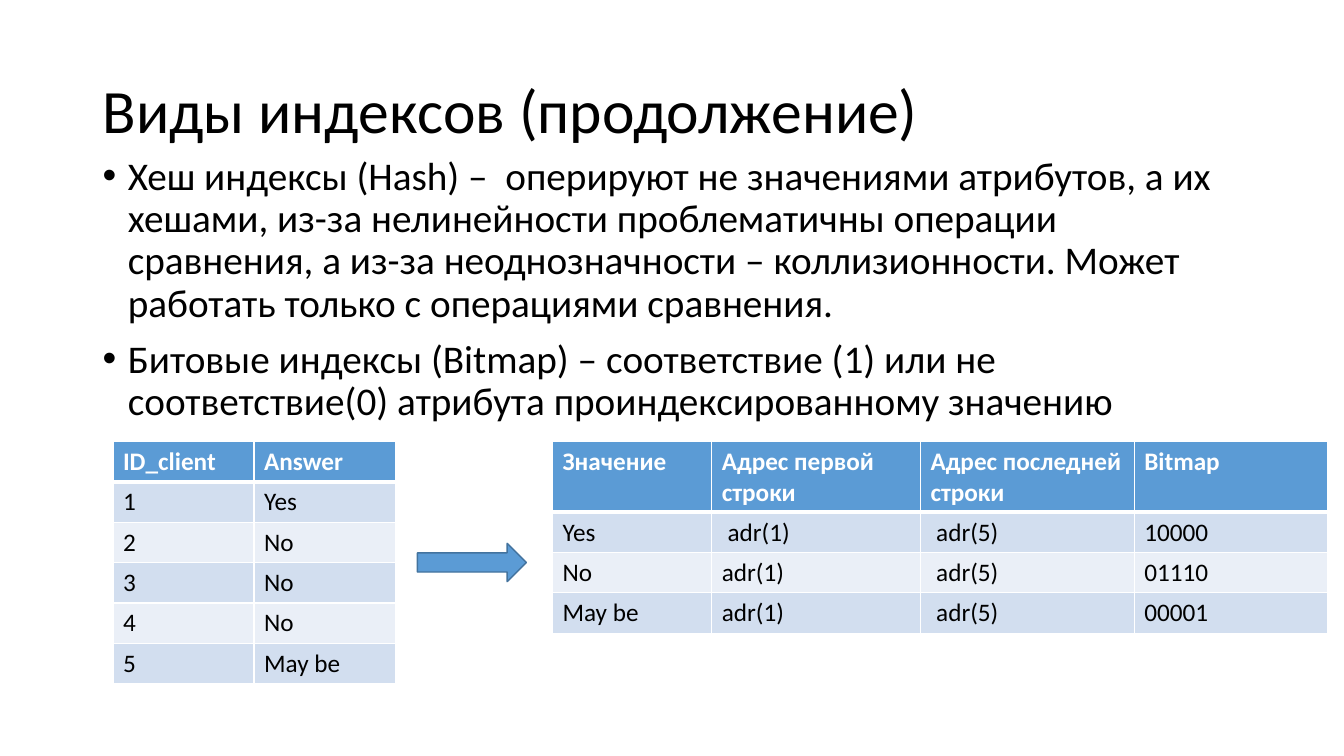
from dataclasses import dataclass

from lxml.etree import SubElement
from pptx import Presentation
from pptx.dml.color import RGBColor
from pptx.enum.shapes import MSO_SHAPE
from pptx.enum.text import MSO_ANCHOR
from pptx.oxml import parse_xml
from pptx.oxml.ns import nsdecls, qn
from pptx.util import Inches, Pt

# Content
TITLE = "Виды индексов (продолжение)"
INDEX_KINDS = [
    "Хеш индексы (Hash) –  оперируют не значениями атрибутов, а их хешами, "
    "из-за нелинейности проблематичны операции сравнения, а из-за "
    "неоднозначности – коллизионности. Может работать только с операциями "
    "сравнения.",
    "Битовые индексы (Bitmap) – соответствие (1) или не соответствие(0) "
    "атрибута проиндексированному значению",
]
CLIENT_ANSWERS = [
    ("ID_client", "Answer"),
    ("1", "Yes"),
    ("2", "No"),
    ("3", "No"),
    ("4", "No"),
    ("5", "May be"),
]
BITMAP_INDEX = [
    ("Значение", "Адрес первой строки", "Адрес последней строки", "Bitmap"),
    ("Yes", " adr(1)", " adr(5)", "10000"),
    ("No", "adr(1)", " adr(5)", "01110"),
    ("May be", "adr(1)", " adr(5)", "00001"),
]


@dataclass(frozen=True)
class Theme:
    font: str = "Calibri"
    title_size: int = 44
    body_size: int = 28
    table_size: int = 18
    ink: str = "000000"
    paper: str = "FFFFFF"
    accent: str = "5B9BD5"
    accent_edge: str = "43739E"
    bands: tuple = ("D2DEEF", "EAEFF7")


THEME = Theme()

# Layout, in inches
TEXT_LEFT, TEXT_WIDTH = 0.92, 11.5
TABLE_TOP, ROW_HEIGHT = 4.38, 0.4
BULLET_INDENT = 0.25


def color(value):
    return RGBColor.from_string(value)


def style_runs(paragraph, size, ink, bold=False):
    for run in paragraph.runs:
        run.font.name = THEME.font
        run.font.size = Pt(size)
        run.font.bold = bold
        run.font.color.rgb = color(ink)


def add_text(slide, top, height, lines, size, anchor):
    box = slide.shapes.add_textbox(
        Inches(TEXT_LEFT), Inches(top), Inches(TEXT_WIDTH), Inches(height))
    frame = box.text_frame
    frame.word_wrap = True
    frame.vertical_anchor = anchor
    frame.text = "\n".join(lines)
    for paragraph in frame.paragraphs:
        paragraph.line_spacing = 0.9
        style_runs(paragraph, size, THEME.ink)
    return frame


def add_bullet(paragraph):
    paragraph.space_before = Pt(10)
    properties = paragraph._p.get_or_add_pPr()
    properties.set("marL", str(Inches(BULLET_INDENT)))
    properties.set("indent", str(-Inches(BULLET_INDENT)))
    SubElement(properties, qn("a:buFont")).set("typeface", "Arial")
    SubElement(properties, qn("a:buChar")).set("char", "•")


def set_borders(cell, row):
    properties = cell._tc.get_or_add_tcPr()
    widths = {"L": 1, "R": 1, "T": 3 if row == 1 else 1, "B": 3 if row == 0 else 1}
    for position, (side, width) in enumerate(widths.items()):
        properties.insert(position, parse_xml(
            f'<a:ln{side} {nsdecls("a")} w="{Pt(width)}"><a:solidFill>'
            f'<a:srgbClr val="{THEME.paper}"/></a:solidFill></a:ln{side}>'))


def add_grid(slide, left, column_widths, header_height, rows):
    height = header_height + ROW_HEIGHT * (len(rows) - 1)
    grid = slide.shapes.add_table(
        len(rows), len(column_widths), Inches(left), Inches(TABLE_TOP),
        Inches(sum(column_widths)), Inches(height)).table
    for column, width in zip(grid.columns, column_widths):
        column.width = Inches(width)
    for r, values in enumerate(rows):
        header = r == 0
        grid.rows[r].height = Inches(header_height if header else ROW_HEIGHT)
        for c, value in enumerate(values):
            cell = grid.cell(r, c)
            cell.text_frame.text = value
            style_runs(cell.text_frame.paragraphs[0], THEME.table_size,
                       THEME.paper if header else THEME.ink, header)
            cell.fill.solid()
            cell.fill.fore_color.rgb = color(
                THEME.accent if header else THEME.bands[(r - 1) % 2])
            set_borders(cell, r)


def main():
    deck = Presentation()
    deck.slide_width, deck.slide_height = Inches(13.33), Inches(7.5)
    slide = deck.slides.add_slide(deck.slide_layouts[6])

    # Title and kinds of index
    add_text(slide, 0.4, 1.45, [TITLE], THEME.title_size, MSO_ANCHOR.MIDDLE)
    kinds = add_text(slide, 1.5, 5.26, INDEX_KINDS, THEME.body_size, MSO_ANCHOR.TOP)
    for paragraph in kinds.paragraphs:
        add_bullet(paragraph)

    # Client answers turn into a bitmap index
    add_grid(slide, 1.12, [1.4, 1.4], ROW_HEIGHT, CLIENT_ANSWERS)
    arrow = slide.shapes.add_shape(
        MSO_SHAPE.RIGHT_ARROW, Inches(4.14), Inches(5.39), Inches(1.08), Inches(0.38))
    arrow.shadow.inherit = False
    arrow.fill.solid()
    arrow.fill.fore_color.rgb = color(THEME.accent)
    arrow.line.color.rgb = color(THEME.accent_edge)
    arrow.line.width = Pt(1)
    add_grid(slide, 5.48, [1.58, 2.07, 2.12, 1.92], 0.7, BITMAP_INDEX)

    deck.save("out.pptx")


if __name__ == "__main__":
    main()
